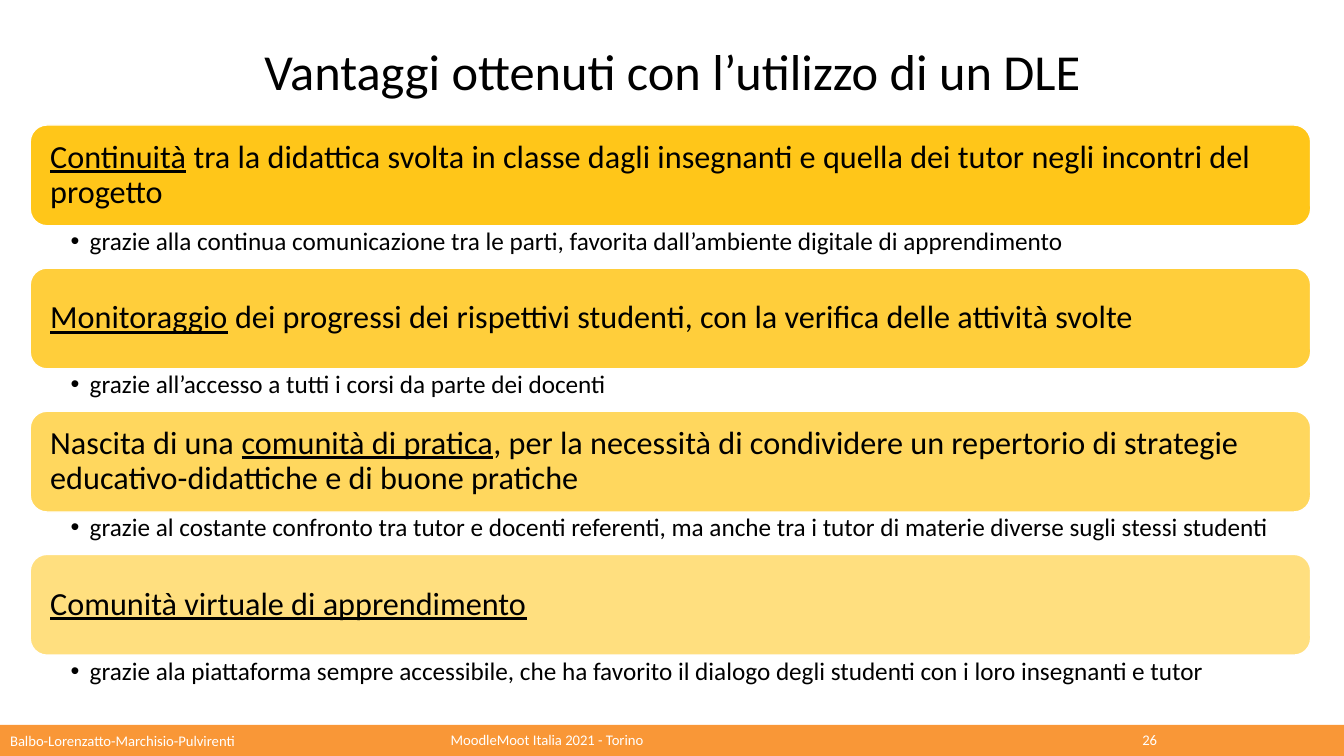
from lxml import etree
from pptx import Presentation
from pptx.dml.color import RGBColor
from pptx.enum import shapes, text
from pptx.oxml import ns
from pptx.util import Inches, Pt

TITLE = "Vantaggi ottenuti con l’utilizzo di un DLE"
AUTHORS = "Balbo-Lorenzatto-Marchisio-Pulvirenti"
FOOTER = [("MoodleMoot Italia 2021 - Torino", 4.47), ("26", 11.33)]
ADVANTAGES = [
    (90, [("Continuità", True),
          (" tra la didattica svolta in classe dagli insegnanti e quella dei tutor "
           "negli incontri del progetto", False)],
     "grazie alla continua comunicazione tra le parti, favorita dall’ambiente "
     "digitale di apprendimento"),
    (77, [("Monitoraggio", True),
          (" dei progressi dei rispettivi studenti, con la verifica delle attività svolte", False)],
     "grazie all’accesso a tutti i corsi da parte dei docenti"),
    (63, [("Nascita di una ", False), ("comunità di pratica", True),
          (", per la necessità di condividere un repertorio di strategie "
           "educativo-didattiche e di buone pratiche", False)],
     "grazie al costante confronto tra tutor e docenti referenti, ma anche tra i tutor "
     "di materie diverse sugli stessi studenti"),
    (50, [("Comunità virtuale di apprendimento", True)],
     "grazie ala piattaforma sempre accessibile, che ha favorito il dialogo degli studenti "
     "con i loro insegnanti e tutor"),
]
LEFT, TOP, WIDTH = 0.3, 1.24, 12.7
CARD_HEIGHT, REASON_HEIGHT = 1, 0.42
BLACK, WHITE, ORANGE, GOLD = "000000", "FFFFFF", "F99737", "FFC000"


def color(value):
    return RGBColor.from_string(value)


def place(part, left, top, width, height):
    part.left, part.top = Inches(left), Inches(top)
    part.width, part.height = Inches(width), Inches(height)


def write(part, runs, size, ink, insets, anchor, align=text.PP_ALIGN.LEFT):
    frame = part.text_frame
    frame.word_wrap = True
    frame.auto_size = text.MSO_AUTO_SIZE.NONE
    frame.vertical_anchor = anchor
    (frame.margin_left, frame.margin_top,
     frame.margin_right, frame.margin_bottom) = map(Inches, insets)
    paragraph = frame.paragraphs[0]
    paragraph.alignment = align
    paragraph.line_spacing = 0.9
    paragraph.space_before = Pt(0)
    for words, underlined in runs:
        run = paragraph.add_run()
        run.text = words
        run.font.name, run.font.size = "Calibri", Pt(size)
        run.font.color.rgb = color(ink)
        if underlined:
            run.font.underline = True
    return paragraph.runs[0].font and paragraph


def add_bullet(paragraph, symbol, indent):
    props = paragraph._p.get_or_add_pPr()
    props.set("marL", str(Inches(indent)))
    props.set("indent", str(-Inches(indent)))
    if symbol:
        etree.SubElement(props, ns.qn("a:buFont")).set("typeface", "Arial")
        etree.SubElement(props, ns.qn("a:buChar")).set("char", symbol)
    else:
        etree.SubElement(props, ns.qn("a:buNone"))


def add_panel(slide, kind, box, fill):
    panel = slide.shapes.add_shape(kind, *map(Inches, box))
    panel.shadow.inherit = False
    panel.fill.solid()
    panel.fill.fore_color.rgb = color(fill)
    return panel


def add_footer(slide, authors):
    bar = add_panel(slide, shapes.MSO_SHAPE.RECTANGLE, (0, 7.19, 13.33, 0.31), ORANGE)
    bar.line.fill.background()
    slide.shapes._spTree.insert(2, bar._element)
    entries = [("\t" + words, False) for words, _ in FOOTER]
    line = write(bar, entries, 10.5, WHITE, (0, 0, 0, 0), text.MSO_ANCHOR.MIDDLE)
    tabs = etree.SubElement(line._p.get_or_add_pPr(), ns.qn("a:tabLst"))
    for _, position in FOOTER:
        etree.SubElement(tabs, ns.qn("a:tab"), pos=str(Inches(position)), algn="l")

    place(authors, 0, 7.23, 4.08, 0.29)
    line = write(authors, [(AUTHORS, False)], 10.5, WHITE,
                 (0.1, 0.05, 0.1, 0.05), text.MSO_ANCHOR.TOP)
    add_bullet(line, None, 0)


def add_advantage(slide, top, opacity, statement, reason):
    card = add_panel(slide, shapes.MSO_SHAPE.ROUNDED_RECTANGLE,
                     (LEFT, top, WIDTH, CARD_HEIGHT), GOLD)
    tint = card._element.spPr.find(ns.qn("a:solidFill"))[0]
    etree.SubElement(tint, ns.qn("a:alpha")).set("val", str(opacity * 1000))
    card.line.color.rgb = color(WHITE)
    card.line.width = Pt(1)
    write(card, statement, 23, BLACK, (0.15, 0.15, 0.15, 0.15), text.MSO_ANCHOR.MIDDLE)

    detail = slide.shapes.add_textbox(
        *map(Inches, (LEFT, top + CARD_HEIGHT, WIDTH, REASON_HEIGHT)))
    line = write(detail, [(reason, False)], 18, BLACK,
                 (0.4, 0.03, 0.18, 0.03), text.MSO_ANCHOR.TOP)
    add_bullet(line, "•", 0.19)


def main():
    deck = Presentation()
    deck.slide_width, deck.slide_height = Inches(13.33), Inches(7.5)
    slide = deck.slides.add_slide(deck.slide_layouts[1])
    title, authors = slide.placeholders
    place(title, 0.92, 0.01, 11.5, 1.45)
    write(title, [(TITLE, False)], 36, BLACK, (0.1, 0.05, 0.1, 0.05),
          text.MSO_ANCHOR.MIDDLE, text.PP_ALIGN.CENTER)
    add_footer(slide, authors)
    for row, advantage in enumerate(ADVANTAGES):
        add_advantage(slide, TOP + row * (CARD_HEIGHT + REASON_HEIGHT), *advantage)
    deck.save("out.pptx")


if __name__ == "__main__":
    main()
